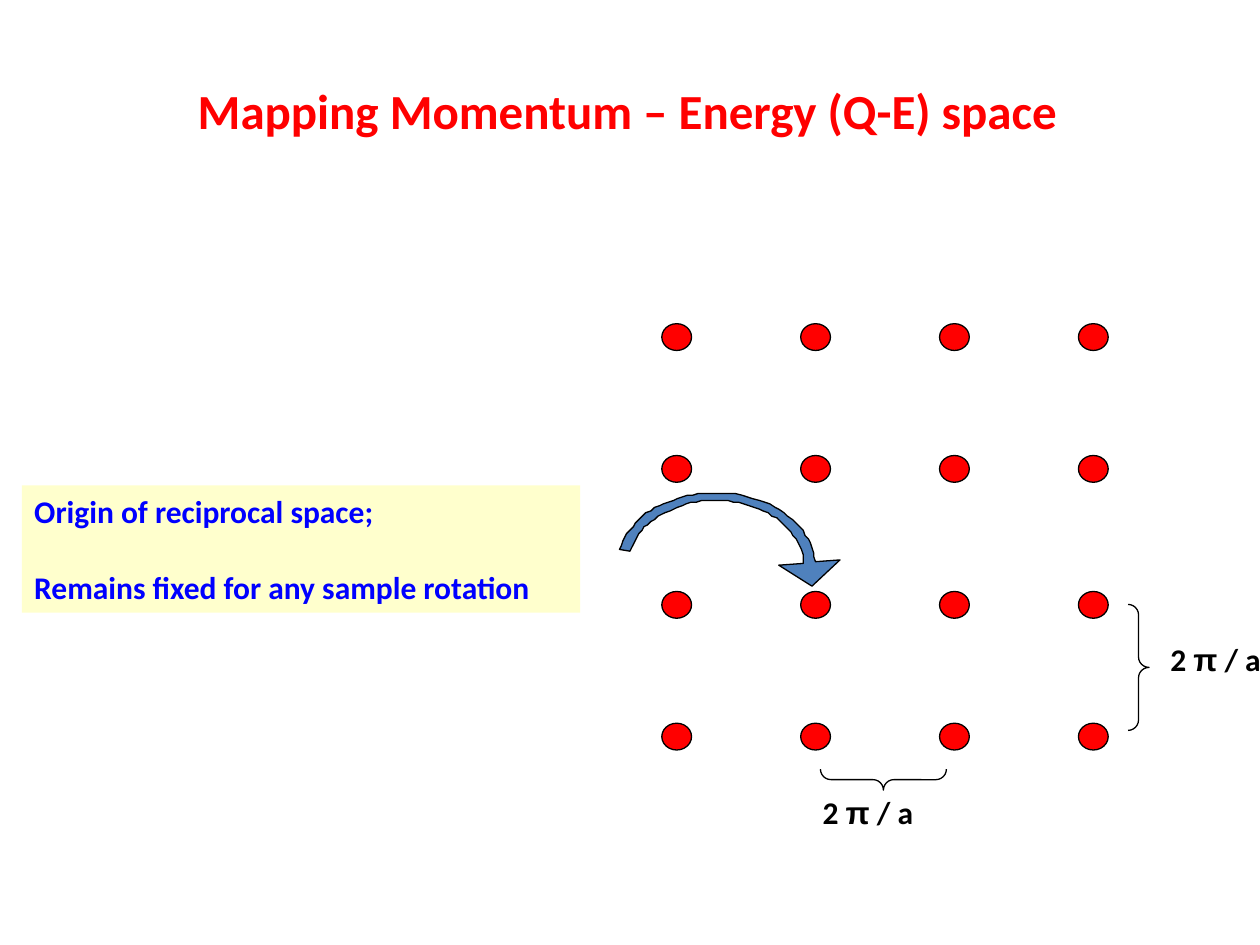
"""Builds the slide on mapping momentum and energy in reciprocal space."""
from lxml.etree import SubElement
from pptx import Presentation
from pptx.dml.color import RGBColor
from pptx.enum.shapes import MSO_SHAPE
from pptx.enum.text import MSO_ANCHOR, PP_ALIGN
from pptx.oxml.ns import qn
from pptx.util import Pt

COLORS = {"red": "FF0000", "blue": "0000FF", "black": "000000",
          "cream": "FFFF99", "steel": "4F81BD"}


def paint(shape, fill=None, line="black"):
    shape.shadow.inherit = False
    if fill:
        shape.fill.solid()
        shape.fill.fore_color.rgb = RGBColor.from_string(COLORS[fill])
    else:
        shape.fill.background()
    if line:
        shape.line.color.rgb = RGBColor.from_string(COLORS[line])
        shape.line.width = Pt(0.75)
    else:
        shape.line.fill.background()


def style(para, size, color):
    para.alignment = PP_ALIGN.LEFT
    para.font.name = "Calibri"
    para.font.size = Pt(size)
    para.font.bold = True
    para.font.color.rgb = RGBColor.from_string(COLORS[color])


deck = Presentation()
deck.slide_width, deck.slide_height = Pt(720), Pt(540)
page = deck.slides.add_slide(deck.slide_layouts[5])
shapes = page.shapes

title = shapes.title
title.left, title.top, title.width, title.height = Pt(105.8), Pt(42.5), Pt(515), Pt(41)
title.text_frame.text = "Mapping Momentum – Energy (Q-E) space"
title.text_frame.vertical_anchor = MSO_ANCHOR.TOP
style(title.text_frame.paragraphs[0], 28, "red")

for top in (185, 260.3, 338, 413.3):
    for column in range(4):
        point = shapes.add_shape(MSO_SHAPE.OVAL, Pt(378.2 + 79.36 * column), Pt(top),
                                 Pt(17), Pt(15.3))
        paint(point, "red")

for left, top, angle in ((644.6, 345.4, 0), (498.8, 409.5, 90)):
    brace = shapes.add_shape(MSO_SHAPE.RIGHT_BRACE, Pt(left), Pt(top), Pt(12), Pt(72))
    brace.adjustments[0] = 0.5
    brace.rotation = angle
    paint(brace)

for left, top in ((661.7, 362.2), (463, 449.5)):
    spacing = shapes.add_textbox(Pt(left), Pt(top), Pt(76), Pt(36))
    spacing.text_frame.word_wrap = True
    para = spacing.text_frame.paragraphs[0]
    style(para, 18, "black")
    for text, font in (("2 ", "Calibri"), ("π", "Arial"), (" / a", "Calibri")):
        span = para.add_run()
        span.text = text
        span.font.name = font

origin = shapes.add_shape(MSO_SHAPE.RECTANGLE, Pt(12.5), Pt(277.4), Pt(319), Pt(72.7))
paint(origin, "cream", None)
tint = origin.fill._xPr.find(qn("a:solidFill"))[0]
SubElement(tint, qn("a:alpha"), val="49000")
frame = origin.text_frame
frame.word_wrap = True
frame.vertical_anchor = MSO_ANCHOR.TOP
frame.text = "Origin of reciprocal space;\nRemains fixed for any sample rotation"
for para in frame.paragraphs:
    style(para, 18, "blue")
frame.paragraphs[1].space_before = Pt(22)

curves = (
    ((459.4, 321.8), (457.9, 301.7), (435.6, 285.8), (409, 285.8)),
    ((409, 285.8), (385.9, 285.8), (365.8, 298.1), (360, 314.6)),
    ((354.2, 313.9), (360, 294.5), (383, 281.5), (409, 281.5)),
    ((409, 281.5), (439.2, 281.5), (463.7, 298.8), (465.8, 321.1)),
)
outline = []
for curve in curves:
    for step in range(25):
        t = step / 24
        weights = ((1 - t) ** 3, 3 * t * (1 - t) ** 2, 3 * t ** 2 * (1 - t), t ** 3)
        outline.append(tuple(sum(w * p[axis] for w, p in zip(weights, curve))
                             for axis in (0, 1)))
outline += [(479.5, 320.4), (463.7, 334.8), (445, 322.6)]
builder = shapes.build_freeform(*outline[0], scale=Pt(1))
builder.add_line_segments(outline[1:], close=True)
paint(builder.convert_to_shape(), "steel")

deck.save("out.pptx")
